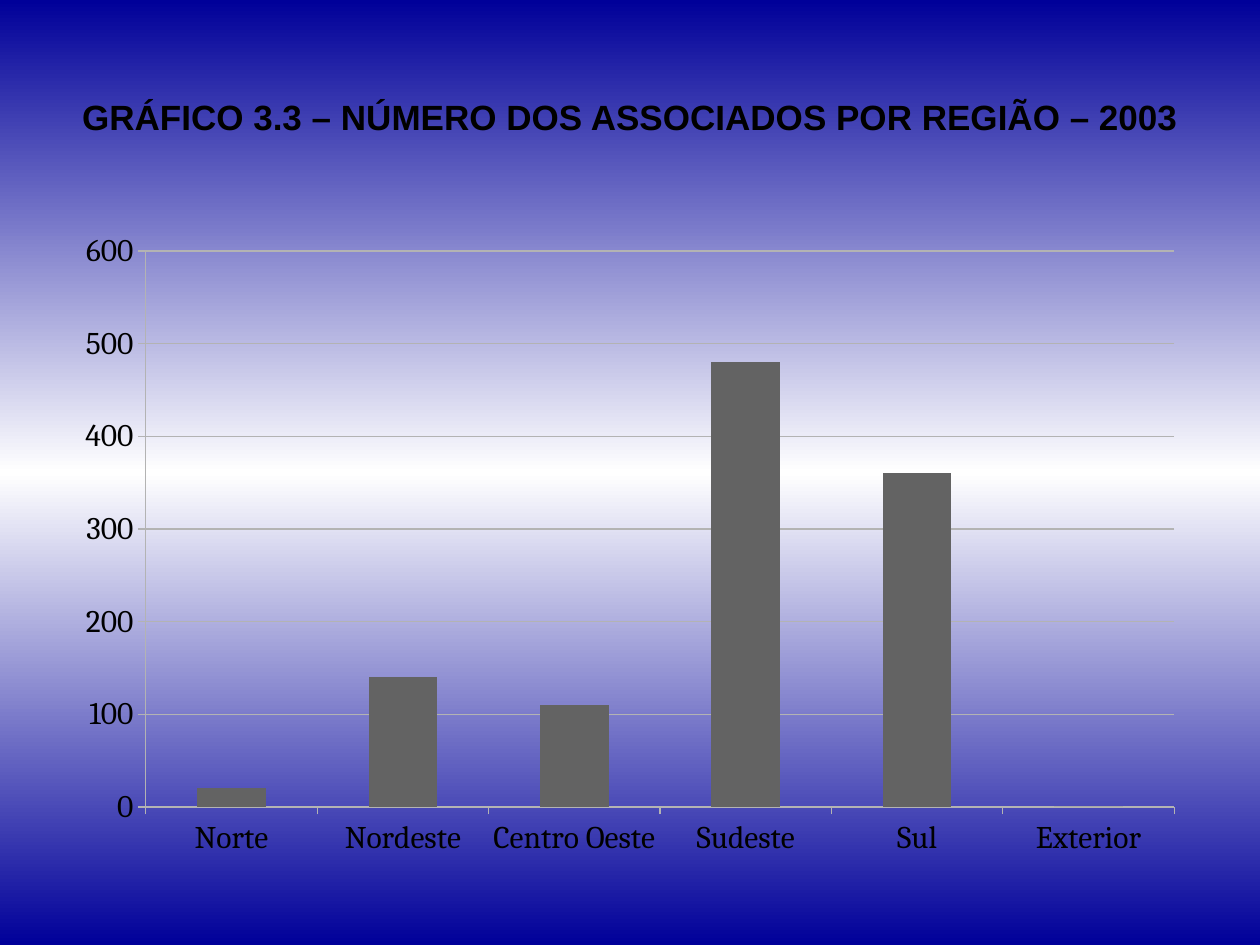
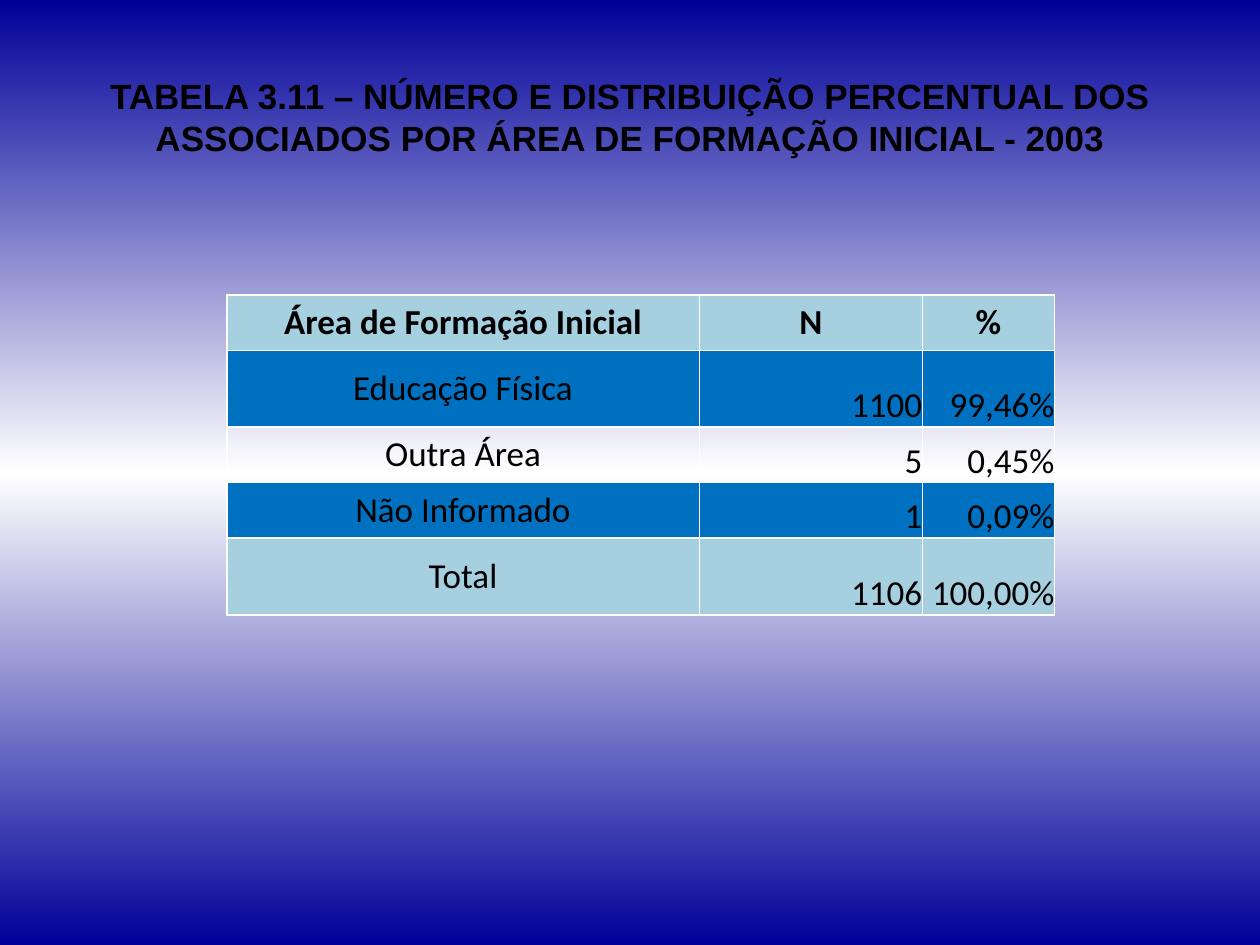
from copy import deepcopy
from dataclasses import dataclass

from lxml import etree
from pptx import Presentation
from pptx import util as u
from pptx.chart.data import CategoryChartData
from pptx.dml.color import RGBColor
from pptx.enum import chart as charts, text
from pptx.oxml import ns

COLORS = {
    "navy": "000099",
    "white": "FFFFFF",
    "black": "000000",
    "blue": "0070C0",
    "pale": "A6D0DF",
    "bar": "636363",
    "line": "B3B3B3",
}
WIDTH, HEIGHT = u.Inches(10), u.Inches(7.5)
COLUMNS, ROWS = 100, 150


@dataclass(frozen=True)
class Area:
    column: float
    row: float
    columns: float
    rows: float

    def box(self) -> tuple[int, int, int, int]:
        return (across(self.column), down(self.row), across(self.columns), down(self.rows))


@dataclass(frozen=True)
class TableRow:
    values: tuple[str, str, str]
    rows: float
    fill: str | None
    header: bool = False


TITLE_AREA = Area(5, 6, 90, 25)
CHART_AREA = Area(5, 35, 90, 103)
PLOT_SHARES = {"x": 0.073, "y": 0.047, "w": 0.907, "h": 0.857}
MEMBERS_BY_REGION = {
    "Norte": 20,
    "Nordeste": 140,
    "Centro Oeste": 110,
    "Sudeste": 480,
    "Sul": 360,
    "Exterior": 0,
}
TABLE_COLUMNS = (37.5, 17.7, 10.5)
TABLE_ROWS = (
    TableRow(("Área de Formação Inicial", "N", "%"), 8.8, "pale", header=True),
    TableRow(("Educação Física", "1100", "99,46%"), 12.2, "blue"),
    TableRow(("Outra Área", "5", "0,45%"), 8.8, None),
    TableRow(("Não Informado", "1", "0,09%"), 8.8, "blue"),
    TableRow(("Total", "1106", "100,00%"), 12.2, "pale"),
)
TABLE_AREA = Area(18, 46.8, sum(TABLE_COLUMNS), sum(row.rows for row in TABLE_ROWS))


def across(columns: float) -> int:
    return round(WIDTH * columns / COLUMNS)


def down(rows: float) -> int:
    return round(HEIGHT * rows / ROWS)


def color(name: str) -> RGBColor:
    return RGBColor.from_string(COLORS[name])


def style_font(font, name: str, size: float, bold: bool = False) -> None:
    font.name, font.size, font.bold = name, u.Pt(size), bold
    font.color.rgb = color("black")


def write(frame, words: str, *, font: str, size: float = 20, bold: bool = False,
          align=text.PP_ALIGN.CENTER) -> None:
    paragraph = frame.paragraphs[0]
    paragraph.alignment = align
    run = paragraph.add_run()
    run.text = words
    style_font(run.font, font, size, bold)


def set_background(master) -> None:
    fill = master.background.fill
    fill.gradient()
    fill.gradient_angle = 270
    for stop, name, position in zip(fill.gradient_stops, ("navy", "white"), (0, 0.5)):
        stop.color.rgb = color(name)
        stop.position = position
    stop_list = master.element.find(".//" + ns.qn("p:bgPr")).find(".//" + ns.qn("a:gsLst"))
    last_stop = deepcopy(stop_list[0])
    last_stop.set("pos", "100000")
    stop_list.append(last_stop)


def add_titled_slide(presentation, title: str):
    slide = presentation.slides.add_slide(presentation.slide_layouts[6])
    frame = slide.shapes.add_textbox(*TITLE_AREA.box()).text_frame
    frame.word_wrap = True
    frame.vertical_anchor = text.MSO_ANCHOR.MIDDLE
    write(frame, title, font="Arial", bold=True)
    return slide


def place_plot(chart) -> None:
    plot_area = chart.element.find(".//" + ns.qn("c:plotArea"))
    for layout in plot_area.findall(ns.qn("c:layout")):
        plot_area.remove(layout)
    layout = etree.Element(ns.qn("c:layout"))
    manual = etree.SubElement(layout, ns.qn("c:manualLayout"))
    settings = {"layoutTarget": "inner", "xMode": "edge", "yMode": "edge", **PLOT_SHARES}
    for tag, value in settings.items():
        etree.SubElement(manual, ns.qn(f"c:{tag}")).set("val", str(value))
    plot_area.insert(0, layout)


def add_region_chart(slide) -> None:
    data = CategoryChartData()
    data.categories = list(MEMBERS_BY_REGION)
    data.add_series("Series 1", list(MEMBERS_BY_REGION.values()))
    frame = slide.shapes.add_chart(charts.XL_CHART_TYPE.COLUMN_CLUSTERED, *CHART_AREA.box(), data)
    chart = frame.chart
    chart.has_legend = chart.has_title = False
    style_font(chart.font, "Cambria", 18)
    plot = chart.plots[0]
    plot.gap_width = 150
    plot.vary_by_categories = False
    fill = plot.series[0].format.fill
    fill.solid()
    fill.fore_color.rgb = color("bar")

    value_axis = chart.value_axis
    value_axis.minimum_scale, value_axis.maximum_scale, value_axis.major_unit = 0, 600, 100
    value_axis.has_major_gridlines = True
    for axis in (chart.category_axis, value_axis):
        axis.major_tick_mark = charts.XL_TICK_MARK.OUTSIDE
        style_font(axis.tick_labels.font, "Cambria", 18)
    for part in (chart.category_axis, value_axis, value_axis.major_gridlines):
        part.format.line.color.rgb = color("line")
        part.format.line.width = u.Pt(0.75)
    place_plot(chart)


def add_borders(cell) -> None:
    properties = cell._tc.get_or_add_tcPr()
    for index, side in enumerate(("lnL", "lnR", "lnT", "lnB")):
        line = etree.Element(ns.qn(f"a:{side}"), w=str(u.Pt(1)))
        solid = etree.SubElement(line, ns.qn("a:solidFill"))
        etree.SubElement(solid, ns.qn("a:srgbClr"), val=COLORS["white"])
        properties.insert(index, line)


def fill_cell(cell, words: str, row: TableRow, is_number: bool) -> None:
    cell.margin_left = cell.margin_right = cell.margin_top = cell.margin_bottom = 0
    cell.vertical_anchor = text.MSO_ANCHOR.BOTTOM if is_number else text.MSO_ANCHOR.MIDDLE
    align = text.PP_ALIGN.RIGHT if is_number else text.PP_ALIGN.CENTER
    write(cell.text_frame, words, font="Calibri", bold=row.header, align=align)
    if row.fill:
        cell.fill.solid()
        cell.fill.fore_color.rgb = color(row.fill)
    else:
        cell.fill.background()
    add_borders(cell)


def add_training_table(slide) -> None:
    frame = slide.shapes.add_table(len(TABLE_ROWS), len(TABLE_COLUMNS), *TABLE_AREA.box())
    table = frame.table
    table.first_row = table.horz_banding = False
    for column, columns in zip(table.columns, TABLE_COLUMNS):
        column.width = across(columns)
    for table_row, row in zip(table.rows, TABLE_ROWS):
        table_row.height = down(row.rows)
        for index, (cell, words) in enumerate(zip(table_row.cells, row.values)):
            fill_cell(cell, words, row, is_number=index > 0 and not row.header)


def main() -> None:
    presentation = Presentation()
    presentation.slide_width, presentation.slide_height = WIDTH, HEIGHT
    set_background(presentation.slide_master)
    add_region_chart(add_titled_slide(
        presentation, "GRÁFICO 3.3 – NÚMERO DOS ASSOCIADOS POR REGIÃO – 2003"))
    add_training_table(add_titled_slide(
        presentation,
        "TABELA 3.11 – NÚMERO E DISTRIBUIÇÃO PERCENTUAL DOS "
        "ASSOCIADOS POR ÁREA DE FORMAÇÃO INICIAL - 2003"))
    presentation.save("out.pptx")


if __name__ == "__main__":
    main()
